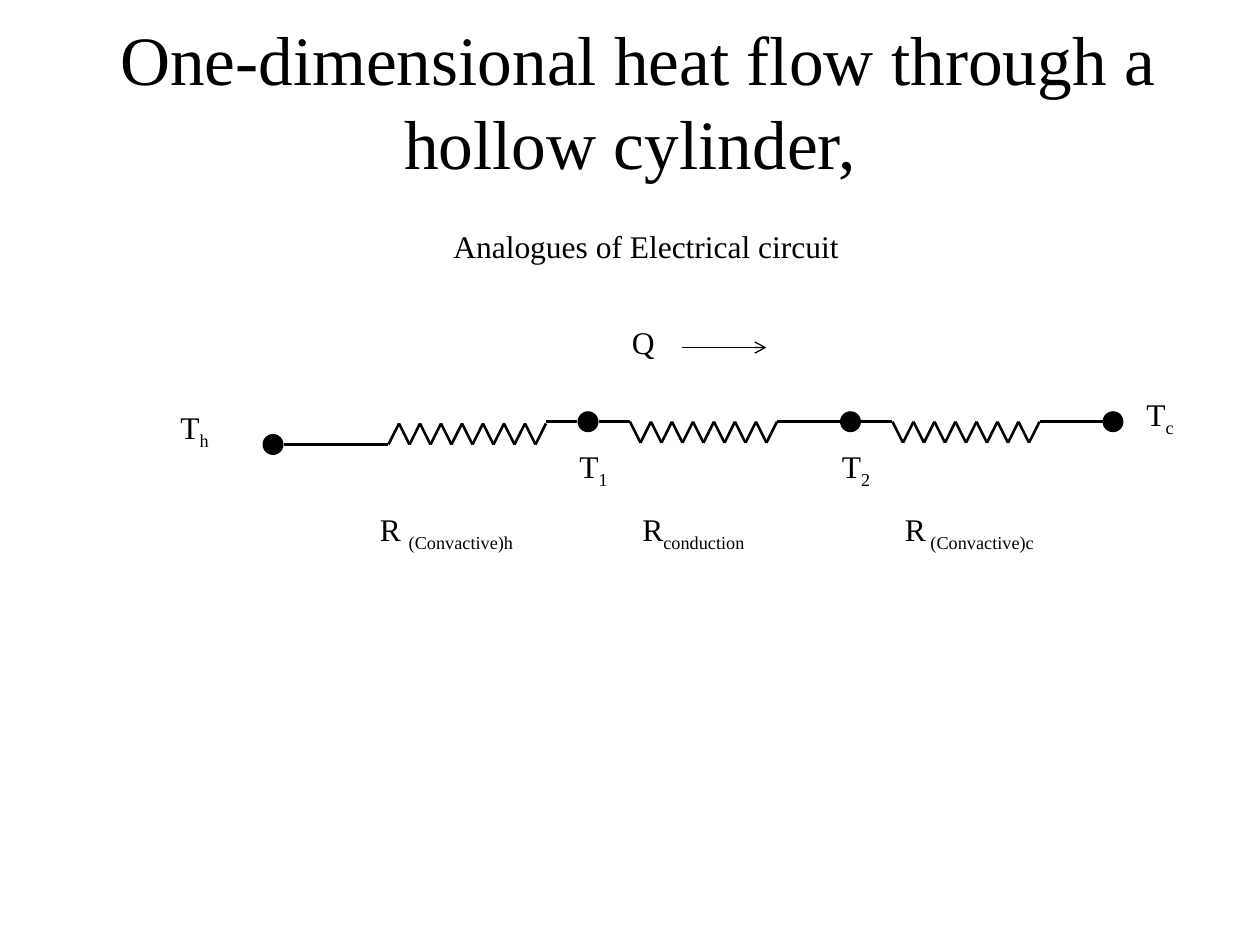
from lxml import etree
from pptx import Presentation
from pptx.dml.color import RGBColor
from pptx.enum.shapes import MSO_CONNECTOR, MSO_SHAPE
from pptx.enum.text import MSO_ANCHOR, MSO_AUTO_SIZE, PP_ALIGN
from pptx.oxml.ns import qn
from pptx.util import Pt

BLACK = RGBColor(0, 0, 0)
SERIF = "Times New Roman"

prs = Presentation()
prs.slide_width, prs.slide_height = Pt(720), Pt(540)
slide = prs.slides.add_slide(prs.slide_layouts[5])
shapes = slide.shapes


def add_wire(x1, y1, x2, y2, width=1.5):
    wire = shapes.add_connector(MSO_CONNECTOR.STRAIGHT, Pt(x1), Pt(y1), Pt(x2), Pt(y2))
    wire.line.color.rgb = BLACK
    wire.line.width = Pt(width)
    etree.SubElement(wire._element.spPr, qn("a:effectLst"))
    return wire


def add_label(x, y, width, text, subscript="", height=29):
    frame = shapes.add_textbox(Pt(x), Pt(y), Pt(width), Pt(height)).text_frame
    frame.word_wrap = True
    frame.auto_size = MSO_AUTO_SIZE.SHAPE_TO_FIT_TEXT
    paragraph = frame.paragraphs[0]
    paragraph.text = text
    if subscript:
        lowered = paragraph.add_run()
        lowered.text = subscript
        lowered.font._element.set("baseline", "-25000")
    for run in paragraph.runs:
        run.font.name, run.font.size = SERIF, Pt(18)
        run.font.color.rgb = BLACK


# Title
title = shapes.title
title.left, title.top, title.width, title.height = Pt(0), Pt(12), Pt(720), Pt(90)
title.text_frame.auto_size = MSO_AUTO_SIZE.NONE
title.text_frame.vertical_anchor = MSO_ANCHOR.MIDDLE
heading = title.text_frame.paragraphs[0]
heading.alignment = PP_ALIGN.CENTER
heading.line_spacing = Pt(48)
for text, font_name in [
    (" ", "Calibri"),
    ("One-dimensional heat flow through a hollow cylinder,", SERIF),
]:
    run = heading.add_run()
    run.text = text
    run.font.name, run.font.size = font_name, Pt(39.6)
    run.font.color.rgb = BLACK

# Resistors: start, number of strokes, level of the first end, level of the next
STROKE = 6
for start, strokes, first, second in [
    (222, 15, 254, 242),
    (360, 14, 241, 253),
    (510, 14, 241, 253),
]:
    levels = (first, second)
    for i in range(strokes):
        x = start + i * STROKE
        add_wire(x, levels[i % 2], x + STROKE, levels[(i + 1) % 2])

# Wires between nodes and resistors
for start, end, y in [
    (162, 222, 254),
    (312, 330, 241),
    (342, 360, 241),
    (444, 486, 241),
    (492, 510, 241),
    (594, 636, 241),
]:
    add_wire(start, y, end, y)

# Temperature nodes
NODE = 12
for x, y in [(150, 248), (330, 235), (480, 235), (630, 235)]:
    node = shapes.add_shape(MSO_SHAPE.OVAL, Pt(x), Pt(y), Pt(NODE), Pt(NODE))
    node.shadow.inherit = False
    node.fill.solid()
    node.fill.fore_color.rgb = BLACK
    node.line.fill.background()

# Heat flow arrow
heat_flow = add_wire(390, 198.6, 438, 198.6, 0.75)
etree.SubElement(heat_flow.line._get_or_add_ln(), qn("a:tailEnd"), type="arrow")

# Labels
add_label(252, 126, 252, "Analogues of Electrical circuit")
add_label(354, 181, 54, "Q")
add_label(96, 229.5, 54, "T", "h")
add_label(324, 252, 54, "T", "1")
add_label(474, 252, 54, "T", "2")
add_label(648, 222, 54, "T", "c")
add_label(210, 288, 102, "R ", "(Convactive)h", height=51)
add_label(360, 288, 102, "R", "conduction")
add_label(510, 288, 102, "R", " (Convactive)c")

prs.save("out.pptx")
